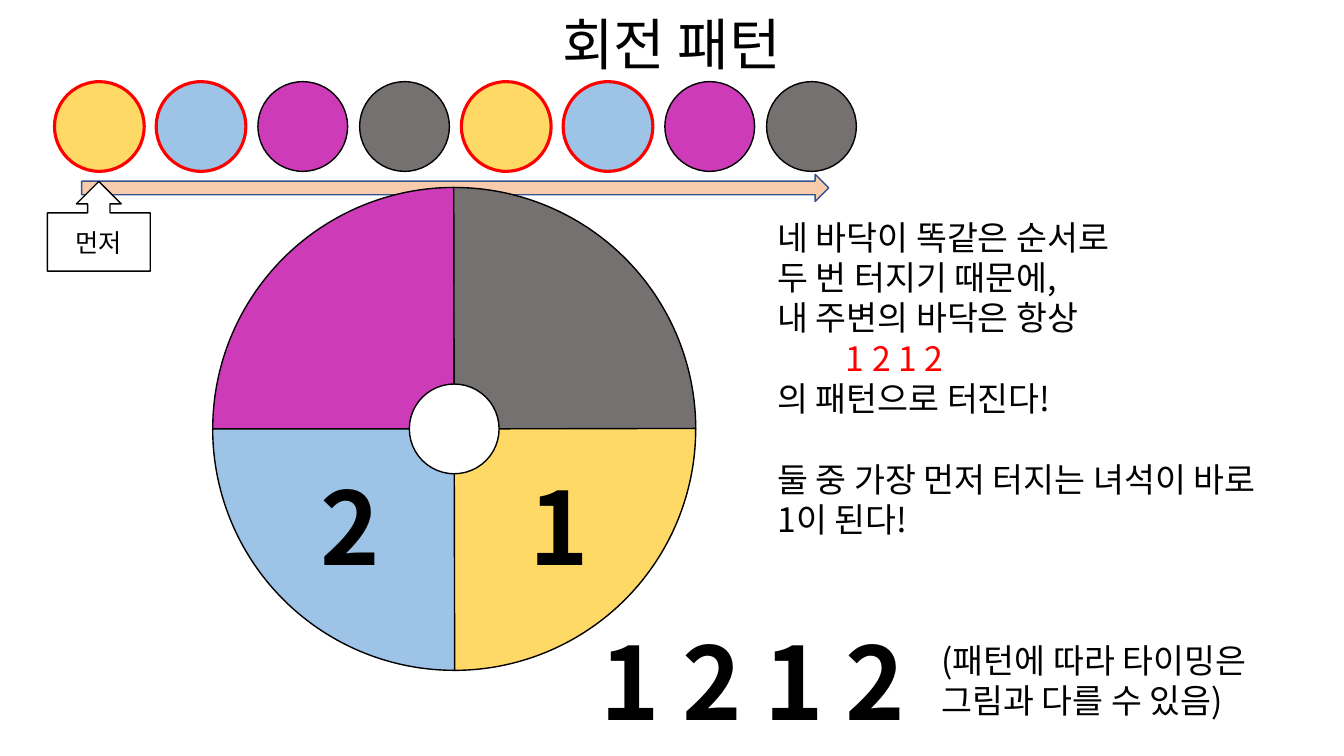
import pptx
import pptx.util
import pptx.dml.color
import pptx.enum.shapes
import pptx.enum.text
import pptx.oxml
import pptx.oxml.ns
import lxml.etree

SHAPE = pptx.enum.shapes.MSO_SHAPE
ALIGN = pptx.enum.text.PP_ALIGN
ANCHOR = pptx.enum.text.MSO_ANCHOR
FONT = "Noto Sans CJK KR"
BLACK, WHITE, RED = "000000", "FFFFFF", "FF0000"
YELLOW, BLUE, PURPLE, GRAY = "FFD966", "9DC3E6", "CD3BB8", "767171"

TITLE = "회전 패턴"
RULES = [
    "네 바닥이 똑같은 순서로",
    "두 번 터지기 때문에,",
    "내 주변의 바닥은 항상",
    "1 2 1 2",
    "의 패턴으로 터진다!",
    "둘 중 가장 먼저 터지는 녀석이 바로",
    "1이 된다!",
]
PATTERN_ROW, CONCLUSION_ROW = 3, 5
NOTE = ["(패턴에 따라 타이밍은", "그림과 다를 수 있음)"]
FIRST = "먼저"
SEQUENCE = [YELLOW, BLUE, PURPLE, GRAY] * 2
OUTLINED = (YELLOW, BLUE)
QUADRANTS = [PURPLE, GRAY, YELLOW, BLUE]
FLOOR_NUMBERS = [("2", 3.08, 4.56), ("1", 5.15, 4.56)]
PATTERN = "1212"

DOT, DOT_LEFT, DOT_TOP, DOT_STEP = 0.89, 0.54, 0.81, 1.009
WHEEL, WHEEL_LEFT, WHEEL_TOP = 4.79, 2.11, 1.86
NUMBER_W, NUMBER_H = 0.79, 1.31
PATTERN_LEFT, PATTERN_TOP, PATTERN_STEP = 5.86, 6.1, 0.81


def rgb(value):
    """Turn a hex string into a colour."""
    return pptx.dml.color.RGBColor.from_string(value)


def inches(*values):
    """Turn numbers into lengths in inches."""
    return [pptx.util.Inches(v) for v in values]


def add_shape(slide, kind, box, fill, line=BLACK, width=1):
    """Add a flat preset shape."""
    sp = slide.shapes.add_shape(kind, *inches(*box))
    sp.shadow.inherit = False
    sp.fill.solid()
    sp.fill.fore_color.rgb = rgb(fill)
    sp.line.color.rgb = rgb(line)
    sp.line.width = pptx.util.Pt(width)
    return sp


def write(sp, lines, size, align=ALIGN.LEFT, anchor=ANCHOR.TOP, wrap=True, bold=False):
    """Write plain paragraphs in one font and return them."""
    tf = sp.text_frame
    tf.text = "\n".join(lines)
    tf.word_wrap = wrap
    tf.auto_size = pptx.enum.text.MSO_AUTO_SIZE.NONE
    tf.vertical_anchor = anchor
    for p in tf.paragraphs:
        p.alignment = align
        p.space_before = pptx.util.Pt(0)
        p.font.name, p.font.size, p.font.bold = FONT, pptx.util.Pt(size), bold
        p.font.color.rgb = rgb(BLACK)
        pPr = p._p.get_or_add_pPr()
        pPr.set("marL", "0")
        pPr.set("indent", "0")
        rPr = pPr.find(pptx.oxml.ns.qn("a:defRPr"))
        ea = lxml.etree.SubElement(rPr, pptx.oxml.ns.qn("a:ea"))
        ea.set("typeface", FONT)
        rPr.addprevious(lxml.etree.Element(pptx.oxml.ns.qn("a:buNone")))
    return tf.paragraphs


def place(sp, box):
    """Move and size a placeholder."""
    sp.left, sp.top, sp.width, sp.height = inches(*box)


def add_number(slide, text, left, top):
    """Add one large bold number with a thin white outline."""
    sp = slide.shapes.add_textbox(*inches(left, top, NUMBER_W, NUMBER_H))
    p = write(sp, [text], 72, ALIGN.CENTER, wrap=False, bold=True)[0]
    rPr = p._p.pPr.find(pptx.oxml.ns.qn("a:defRPr"))
    rPr.insert(0, pptx.oxml.parse_xml(
        f'<a:ln {pptx.oxml.ns.nsdecls("a")} w="9525"><a:solidFill>'
        f'<a:srgbClr val="{WHITE}"/></a:solidFill></a:ln>'))


def main():
    """Build the rotation pattern slide."""
    prs = pptx.Presentation()
    prs.slide_width, prs.slide_height = inches(13.33, 7.5)
    slide = prs.slides.add_slide(prs.slide_layouts[1])
    title, body = slide.placeholders

    place(title, (5.34, 0.04, 2.64, 0.77))
    write(title, [TITLE], 40, ALIGN.CENTER, wrap=False)
    place(body, (7.61, 2.1, 5.63, 3.33))
    rules = write(body, RULES, 24, wrap=False)
    rules[PATTERN_ROW].font.color.rgb = rgb(RED)
    rules[PATTERN_ROW]._p.pPr.set("marL", str(pptx.util.Inches(0.68)))
    rules[CONCLUSION_ROW].space_before = pptx.util.Pt(29)

    add_shape(slide, SHAPE.RIGHT_ARROW, (0.81, 1.73, 7.41, 0.27), "F8CBAD", "325491")
    for i, color in enumerate(QUADRANTS):
        sp = add_shape(slide, SHAPE.PIE, (WHEEL_LEFT, WHEEL_TOP, WHEEL, WHEEL), color)
        sp.adjustments[0], sp.adjustments[1] = 107.93, 162
        sp.rotation = 90 * i
    hub = (WHEEL - DOT) / 2
    add_shape(slide, SHAPE.OVAL, (WHEEL_LEFT + hub, WHEEL_TOP + hub, DOT, DOT), WHITE)

    for number in FLOOR_NUMBERS:
        add_number(slide, *number)
    for i, digit in enumerate(PATTERN):
        add_number(slide, digit, PATTERN_LEFT + i * PATTERN_STEP, PATTERN_TOP)

    for i, color in enumerate(SEQUENCE):
        line, width = (RED, 2.25) if color in OUTLINED else (BLACK, 1)
        box = (DOT_LEFT + i * DOT_STEP, DOT_TOP, DOT, DOT)
        add_shape(slide, SHAPE.OVAL, box, color, line, width)

    note = slide.shapes.add_textbox(*inches(9.24, 6.3, 3.78, 0.91))
    write(note, NOTE, 24)
    first = add_shape(slide, SHAPE.UP_ARROW_CALLOUT, (0.47, 1.8, 1.02, 0.89), WHITE)
    write(first, [FIRST], 18, ALIGN.CENTER, ANCHOR.MIDDLE)

    prs.save("out.pptx")


if __name__ == "__main__":
    main()
